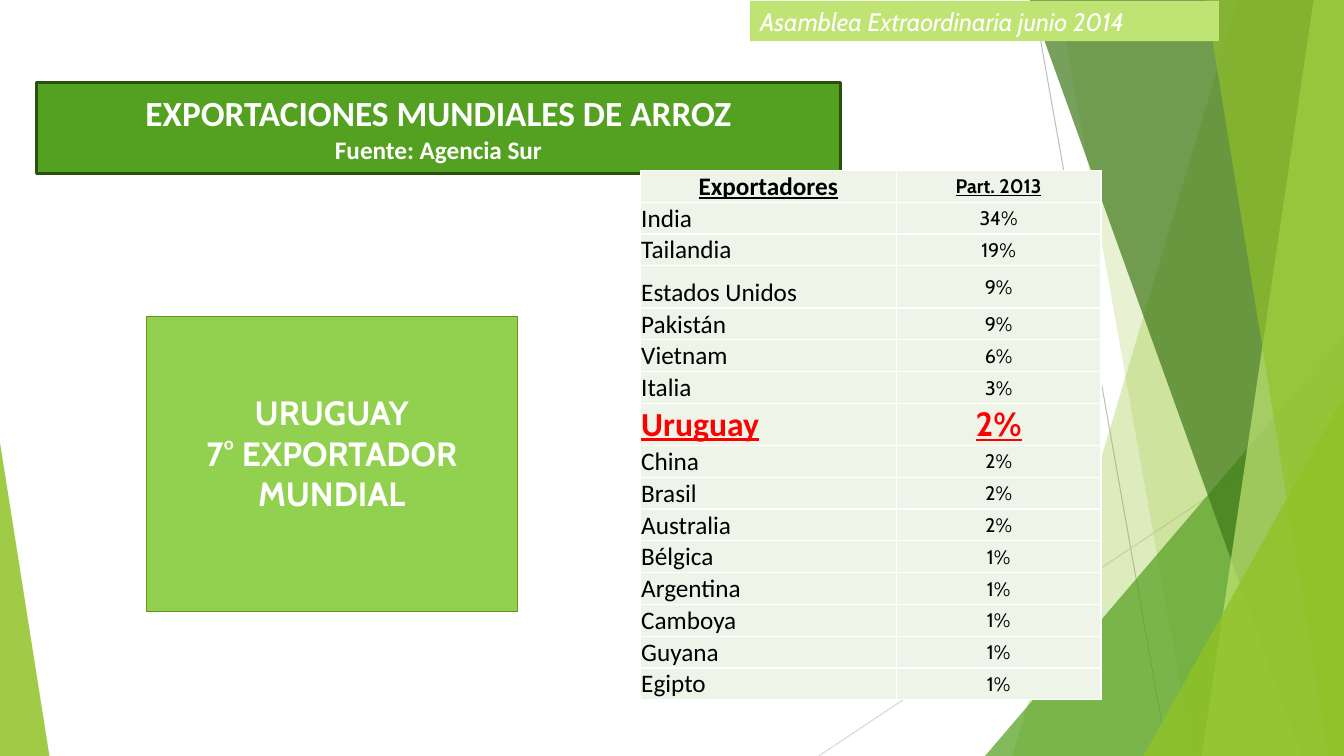
from lxml import etree
from pptx import Presentation
from pptx.dml.color import RGBColor
from pptx.enum import shapes, text
from pptx.oxml import ns
from pptx.util import Inches, Pt

WHITE = RGBColor(0xFF, 0xFF, 0xFF)
BLACK = RGBColor(0x00, 0x00, 0x00)
RED = RGBColor(0xFF, 0x00, 0x00)
GRAY = RGBColor(0xBF, 0xBF, 0xBF)
LIGHT_GRAY = RGBColor(0xD9, 0xD9, 0xD9)
LIME = RGBColor(0x90, 0xC2, 0x26)
PALE_LIME = RGBColor(0xC0, 0xE4, 0x74)
GREEN = RGBColor(0x54, 0xA0, 0x21)
DARK_GREEN = RGBColor(0x3F, 0x78, 0x19)
TITLE_EDGE = RGBColor(0x2A, 0x50, 0x10)
BOX_GREEN = RGBColor(0x92, 0xD0, 0x50)
BOX_EDGE = RGBColor(0x6C, 0x92, 0x1D)
CELL_GREEN = RGBColor(0xEE, 0xF4, 0xE8)

WIDTH, HEIGHT = 13.33, 7.5
FACET_TOP = -0.01
ROW_HEIGHT = 0.31
TALL_ROWS = {"Estados Unidos": 0.42, "Uruguay": 0.41}
HEADER = ("Exportadores", "Part. 2013")
EXPORTERS = [
    ("India", 34), ("Tailandia", 19), ("Estados Unidos", 9), ("Pakistán", 9),
    ("Vietnam", 6), ("Italia", 3), ("Uruguay", 2), ("China", 2),
    ("Brasil", 2), ("Australia", 2), ("Bélgica", 1), ("Argentina", 1),
    ("Camboya", 1), ("Guyana", 1), ("Egipto", 1),
]


def set_format(target, values):
    for name, value in values.items():
        setattr(target, name, value)


def add_run(paragraph, words, color, **font_format):
    run = paragraph.add_run()
    run.text = words
    run.font.color.rgb = color
    set_format(run.font, font_format)


def paint(shape, color, opacity=100, edge=None, edge_width=0.75):
    shape.shadow.inherit = False
    shape.fill.solid()
    shape.fill.fore_color.rgb = color
    if opacity < 100:
        solid = shape.fill._xPr.find(ns.qn("a:solidFill"))
        etree.SubElement(solid[0], ns.qn("a:alpha"), val=str(opacity * 1000))
    if edge is None:
        shape.line.fill.background()
    else:
        shape.line.color.rgb = edge
        shape.line.width = Pt(edge_width)


def add_hairline(slide, start, end, color):
    line = slide.shapes.add_connector(
        shapes.MSO_CONNECTOR.STRAIGHT, *map(Inches, start + end))
    line.line.color.rgb = color
    line.line.width = Pt(0.75)
    etree.SubElement(line._element.spPr, ns.qn("a:effectLst"))


def add_facet(slide, top_x, bottom_x, color, opacity):
    corners = [(WIDTH, FACET_TOP), (WIDTH, HEIGHT), (bottom_x, HEIGHT)]
    builder = slide.shapes.build_freeform(Inches(top_x), Inches(FACET_TOP))
    builder.add_line_segments([(Inches(x), Inches(y)) for x, y in corners])
    paint(builder.convert_to_shape(), color, opacity)


def add_triangle(slide, box, apex, color, opacity):
    shape = slide.shapes.add_shape(
        shapes.MSO_SHAPE.ISOSCELES_TRIANGLE, *map(Inches, box))
    shape.adjustments[0] = apex
    paint(shape, color, opacity)


def add_panel(slide, box, color, edge=None, edge_width=0.75, **frame_format):
    shape = slide.shapes.add_shape(
        shapes.MSO_SHAPE.RECTANGLE, *map(Inches, box))
    paint(shape, color, edge=edge, edge_width=edge_width)
    frame = shape.text_frame
    set_format(frame, {"word_wrap": True, **frame_format})
    return frame


def add_borders(cell):
    properties = cell._tc.get_or_add_tcPr()
    for index, side in enumerate(("lnL", "lnR", "lnT", "lnB")):
        border = etree.Element(ns.qn(f"a:{side}"), w=str(Pt(1)))
        solid = etree.SubElement(border, ns.qn("a:solidFill"))
        etree.SubElement(solid, ns.qn("a:srgbClr"), val=str(WHITE))
        properties.insert(index, border)


def fill_cell(cell, words, anchor, align, color, **font_format):
    margin = Inches(0.01)
    set_format(cell, {"margin_left": margin, "margin_right": margin,
                      "margin_top": margin, "margin_bottom": 0,
                      "vertical_anchor": anchor})
    cell.fill.solid()
    cell.fill.fore_color.rgb = CELL_GREEN
    add_borders(cell)
    paragraph = cell.text_frame.paragraphs[0]
    paragraph.alignment = align
    add_run(paragraph, words, color, **font_format)


def add_exporters_table(slide):
    rows = [HEADER] + [(name, f"{share}%") for name, share in EXPORTERS]
    heights = [TALL_ROWS.get(name, ROW_HEIGHT) for name, _ in rows]
    table = slide.shapes.add_table(
        len(rows), 2, Inches(6.35), Inches(1.69),
        Inches(4.57), Inches(sum(heights))).table
    set_format(table, {"first_row": False, "horz_banding": False})
    for column, width in zip(table.columns, (2.54, 2.03)):
        column.width = Inches(width)
    for index, (name, share) in enumerate(rows):
        table.rows[index].height = Inches(heights[index])
        is_header, is_uruguay = index == 0, name == "Uruguay"
        strong = is_header or is_uruguay
        color = RED if is_uruguay else BLACK
        emphasis = {"bold": strong, "underline": strong}
        name_anchor = text.MSO_ANCHOR.MIDDLE if is_header else text.MSO_ANCHOR.BOTTOM
        name_align = text.PP_ALIGN.CENTER if is_header else text.PP_ALIGN.LEFT
        fill_cell(table.cell(index, 0), name, name_anchor, name_align, color,
                  name="Calibri", size=Pt(24 if is_uruguay else 18), **emphasis)
        fill_cell(table.cell(index, 1), share, text.MSO_ANCHOR.MIDDLE,
                  text.PP_ALIGN.CENTER, color,
                  name="Cabin", size=Pt(24 if is_uruguay else 14), **emphasis)


def add_background(slide):
    add_hairline(slide, (10.25, 0), (11.58, HEIGHT), GRAY)
    add_hairline(slide, (WIDTH, 4.03), (8.12, HEIGHT), LIGHT_GRAY)
    add_facet(slide, 12.28, 10.04, LIME, 30)
    add_facet(slide, 10.5, 11.83, LIME, 20)
    add_triangle(slide, (9.77, 3.33, 3.56, 4.17), 1, GREEN, 72)
    add_facet(slide, 10.21, 12.91, DARK_GREEN, 70)
    add_facet(slide, 13.03, 11.92, PALE_LIME, 70)
    add_facet(slide, 11.96, 13.18, LIME, 65)
    add_triangle(slide, (11.34, 3.93, 1.99, 3.57), 1, LIME, 80)
    add_triangle(slide, (0, 4.39, 0.49, 3.11), 0, LIME, 85)


def add_title(slide):
    frame = add_panel(slide, (0.36, 0.82, 7.98, 0.9), GREEN, TITLE_EDGE, 2.25,
                      vertical_anchor=text.MSO_ANCHOR.MIDDLE)
    paragraph = frame.paragraphs[0]
    paragraph.alignment = text.PP_ALIGN.CENTER
    add_run(paragraph, "EXPORTACIONES MUNDIALES DE ARROZ", WHITE,
            name="Calibri", size=Pt(25.2), bold=True)
    paragraph.add_line_break()
    add_run(paragraph, "Fuente: Agencia Sur", WHITE,
            name="Calibri", size=Pt(18), bold=True)


def add_assembly_label(slide):
    frame = add_panel(slide, (7.44, 0.01, 4.65, 0.4), PALE_LIME,
                      vertical_anchor=text.MSO_ANCHOR.MIDDLE)
    paragraph = frame.paragraphs[0]
    paragraph.alignment = text.PP_ALIGN.LEFT
    add_run(paragraph, "Asamblea Extraordinaria junio 2014", WHITE,
            name="Cabin", size=Pt(18), italic=True)


def add_ranking_box(slide):
    frame = add_panel(slide, (1.45, 3.14, 3.68, 2.93), BOX_GREEN, BOX_EDGE,
                      vertical_anchor=text.MSO_ANCHOR.TOP,
                      margin_top=Inches(0.75))
    for index, words in enumerate(("URUGUAY", "7° EXPORTADOR", "MUNDIAL")):
        paragraph = frame.add_paragraph() if index else frame.paragraphs[0]
        paragraph.alignment = text.PP_ALIGN.CENTER
        add_run(paragraph, words, WHITE, name="Cabin", size=Pt(24), bold=True)


def main():
    presentation = Presentation()
    set_format(presentation, {"slide_width": Inches(WIDTH),
                              "slide_height": Inches(HEIGHT)})
    slide = presentation.slides.add_slide(presentation.slide_layouts[6])
    add_background(slide)
    add_title(slide)
    add_assembly_label(slide)
    add_exporters_table(slide)
    add_ranking_box(slide)
    presentation.save("out.pptx")


if __name__ == "__main__":
    main()
